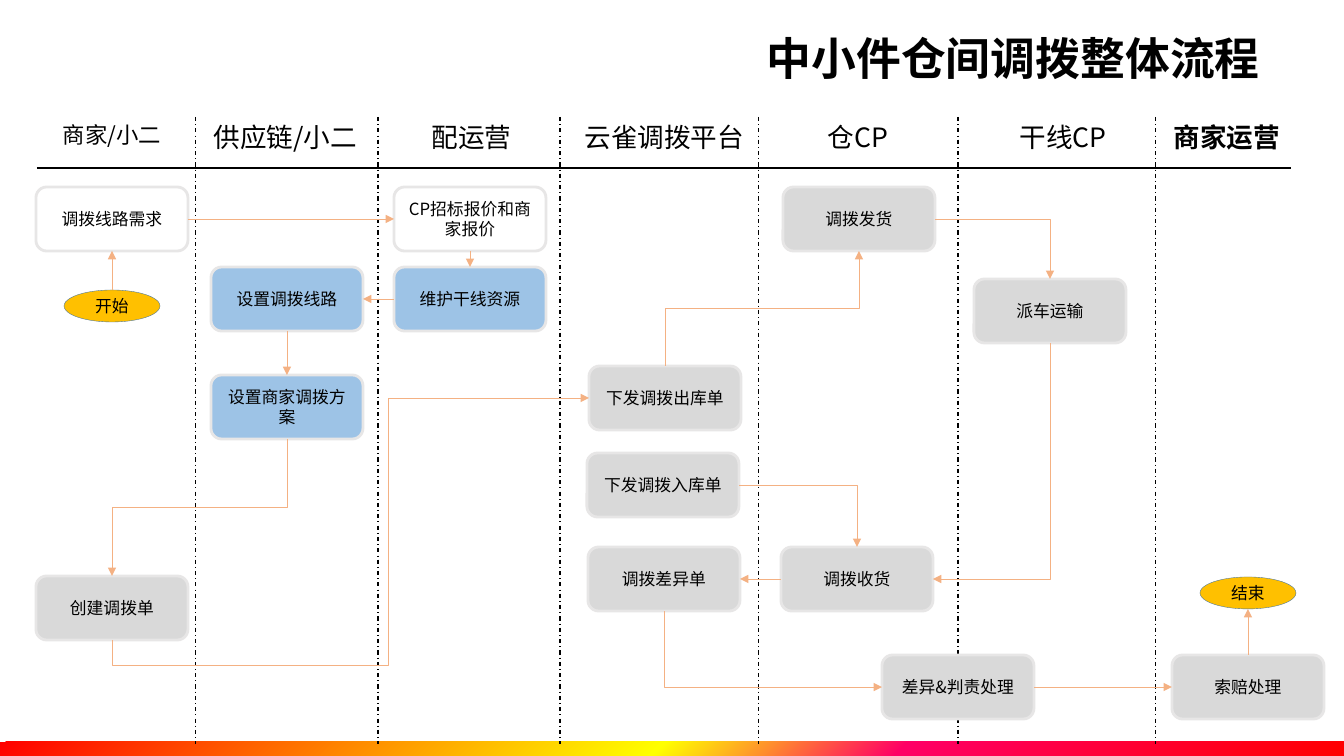
"""Build a swimlane slide showing the inter-warehouse transfer process."""
import dataclasses

import lxml.etree
import pptx
import pptx.dml.color
import pptx.enum.dml
import pptx.enum.shapes
import pptx.enum.text
import pptx.oxml.ns
import pptx.util

EMU_PER_PX = 914400 / 100.8
SLIDE_WIDTH, SLIDE_HEIGHT = 1344, 756
BOX_SIZE = (152, 64)
OVAL_SIZE = (96, 32)
LANE_TOP, LANE_BOTTOM = 117, 744


@dataclasses.dataclass(frozen=True)
class Theme:
    font: str = "Noto Sans CJK SC"
    latin_font: str = "Calibri"
    ink: str = "000000"
    white: str = "FFFFFF"
    blue: str = "9DC3E6"
    grey: str = "D9D9D9"
    box_line: str = "E7E6E6"
    oval_fill: str = "FFC000"
    oval_line: str = "43739E"
    arrow: str = "F4B183"
    band: tuple = ((0, "FF0000"), (33, "FF0066"), (51, "FFFF00"), (100, "FF0000"))
    title_size: float = 32
    lane_size: float = 19
    small_lane_size: float = 16
    box_size: float = 12


THEME = Theme()

LANES = [
    ("商家/小二", 53, 178, THEME.small_lane_size, False),
    ("供应链/小二", 204, 178, THEME.lane_size, False),
    ("配运营", 422, 178, THEME.lane_size, False),
    ("云雀调拨平台", 575, 190, THEME.lane_size, False),
    ("仓CP", 818, 178, THEME.lane_size, False),
    ("干线CP", 1010, 178, THEME.lane_size, False),
    ("商家运营", 1164, 138, THEME.lane_size, True),
]
DIVIDERS = [196, 378, 560, 759, 958, 1156]

BOXES = [
    ("调拨线路需求", 36, 187, THEME.white),
    ("CP招标报价和商家报价", 394, 187, THEME.white),
    ("维护干线资源", 394, 267, THEME.blue),
    ("设置调拨线路", 211, 267, THEME.blue),
    ("设置商家调拨方案", 211, 375, THEME.blue),
    ("创建调拨单", 36, 576, THEME.grey),
    ("下发调拨出库单", 589, 366, THEME.grey),
    ("下发调拨入库单", 587, 453, THEME.grey),
    ("调拨差异单", 588, 547, THEME.grey),
    ("调拨发货", 783, 187, THEME.grey),
    ("调拨收货", 781, 547, THEME.grey),
    ("派车运输", 974, 279, THEME.grey),
    ("差异&判责处理", 882, 655, THEME.grey),
    ("索赔处理", 1172, 655, THEME.grey),
]
OVALS = [("开始", 64, 290), ("结束", 1200, 577)]

STRAIGHT_ARROWS = [
    ("开始", "top", "调拨线路需求", "bottom"),
    ("调拨线路需求", "right", "CP招标报价和商家报价", "left"),
    ("CP招标报价和商家报价", "bottom", "维护干线资源", "top"),
    ("维护干线资源", "left", "设置调拨线路", "right"),
    ("设置调拨线路", "bottom", "设置商家调拨方案", "top"),
    ("调拨收货", "left", "调拨差异单", "right"),
    ("差异&判责处理", "right", "索赔处理", "left"),
    ("索赔处理", "top", "结束", "bottom"),
]
BENT_ARROWS = [
    ("设置商家调拨方案", "bottom", "创建调拨单", "top", [50]),
    ("创建调拨单", "bottom", "下发调拨出库单", "left", [-10.4, 57.9]),
    ("下发调拨出库单", "top", "调拨发货", "bottom", [50]),
    ("调拨发货", "right", "派车运输", "top", []),
    ("派车运输", "bottom", "调拨收货", "right", []),
    ("下发调拨入库单", "right", "调拨收货", "top", []),
    ("调拨差异单", "bottom", "差异&判责处理", "left", []),
]


def px(length):
    """Turn a px length into EMU."""
    return pptx.util.Emu(round(length * EMU_PER_PX))


def rgb(value):
    """Turn a hex string into a colour."""
    return pptx.dml.color.RGBColor.from_string(value)


def add_element(parent, tag, **attributes):
    """Append a DrawingML child element."""
    name = pptx.oxml.ns.qn(f"a:{tag}")
    return lxml.etree.SubElement(parent, name, {key: str(value) for key, value in attributes.items()})


def write_text(paragraph, text, size, bold=False, latin=THEME.font):
    """Add one styled run to a paragraph."""
    run = paragraph.add_run()
    run.text = text
    run.font.size = pptx.util.Pt(size)
    run.font.bold = bold
    run.font.name = latin
    run.font.color.rgb = rgb(THEME.ink)
    add_element(run.font._element, "ea", typeface=THEME.font)


def add_label(slide, bounds, text, size, bold=False, latin=THEME.font):
    """Add a wrapping text box and return its frame."""
    frame = slide.shapes.add_textbox(*map(px, bounds)).text_frame
    frame.word_wrap = True
    write_text(frame.paragraphs[0], text, size, bold, latin)
    return frame


def add_title(slide, text):
    """Add the right-aligned slide title."""
    frame = add_label(slide, (111, 14, 1159, 93), text, THEME.title_size, bold=True)
    frame.vertical_anchor = pptx.enum.text.MSO_ANCHOR.MIDDLE
    frame.paragraphs[0].alignment = pptx.enum.text.PP_ALIGN.RIGHT
    frame.paragraphs[0].line_spacing = 0.9


def add_band(slide):
    """Add the gradient band along the bottom edge."""
    top = 742
    shape = slide.shapes.add_shape(
        pptx.enum.shapes.MSO_SHAPE.RECTANGLE, 0, px(top), px(SLIDE_WIDTH), px(SLIDE_HEIGHT - top))
    shape.shadow.inherit = False
    shape.line.fill.background()
    shape.fill.gradient()
    gradient = shape._element.spPr.find(pptx.oxml.ns.qn("a:gradFill"))
    for child in list(gradient):
        gradient.remove(child)
    stops = add_element(gradient, "gsLst")
    for position, colour in THEME.band:
        add_element(add_element(stops, "gs", pos=position * 1000), "srgbClr", val=colour)
    circle = add_element(gradient, "path", path="circle")
    add_element(circle, "fillToRect", l=100000, t=100000)


def add_node(slide, preset, bounds, text, fill, line, line_width):
    """Add a filled process shape with centred text."""
    shape = slide.shapes.add_shape(preset, *map(px, bounds))
    shape.shadow.inherit = False
    shape.fill.solid()
    shape.fill.fore_color.rgb = rgb(fill)
    shape.line.color.rgb = rgb(line)
    shape.line.width = pptx.util.Pt(line_width)
    frame = shape.text_frame
    frame.word_wrap = True
    frame.vertical_anchor = pptx.enum.text.MSO_ANCHOR.MIDDLE
    frame.paragraphs[0].alignment = pptx.enum.text.PP_ALIGN.CENTER
    write_text(frame.paragraphs[0], text, THEME.box_size)


def add_line(slide, start, end, colour, width, kind=pptx.enum.shapes.MSO_CONNECTOR.STRAIGHT):
    """Add a plain connector between two points."""
    line = slide.shapes.add_connector(kind, *map(px, (*start, *end)))
    line.line.color.rgb = rgb(colour)
    line.line.width = pptx.util.Pt(width)
    add_element(line._element.spPr, "effectLst")
    return line


def add_arrow(slide, start, end, kind=pptx.enum.shapes.MSO_CONNECTOR.STRAIGHT):
    """Add a flow arrow between two points."""
    arrow = add_line(slide, start, end, THEME.arrow, 0.5, kind)
    add_element(arrow.line._get_or_add_ln(), "tailEnd", type="triangle")
    return arrow


def add_bent_arrow(slide, start, end, side, target_side, adjustments):
    """Add an elbow arrow that leaves its box by the given side."""
    arrow = add_arrow(slide, start, end, pptx.enum.shapes.MSO_CONNECTOR.ELBOW)
    across, down = end[0] - start[0], end[1] - start[1]
    transform = arrow._element.spPr.xfrm
    if side in ("top", "bottom"):
        middle_x, middle_y = (start[0] + end[0]) / 2, (start[1] + end[1]) / 2
        across, down = down, -across
        arrow.left, arrow.top = px(middle_x - abs(across) / 2), px(middle_y - abs(down) / 2)
        arrow.width, arrow.height = px(abs(across)), px(abs(down))
        transform.set("rot", str(90 * 60000))
    transform.set("flipH", str(int(across < 0)))
    transform.set("flipV", str(int(down < 0)))
    geometry = arrow._element.spPr.find(pptx.oxml.ns.qn("a:prstGeom"))
    geometry.set("prst", f"bentConnector{len(adjustments) + 2}")
    guides = geometry.find(pptx.oxml.ns.qn("a:avLst"))
    for number, percent in enumerate(adjustments, 1):
        add_element(guides, "gd", name=f"adj{number}", fmla=f"val {round(percent * 1000)}")


def side_point(bounds, side):
    """Return the middle of one side of a shape."""
    left, top, width, height = bounds
    return {
        "top": (left + width // 2, top),
        "bottom": (left + width // 2, top + height),
        "left": (left, top + height // 2),
        "right": (left + width, top + height // 2),
    }[side]


def add_lanes(slide):
    """Add lane headings, the heading rule and the lane dividers."""
    for text, left, width, size, bold in LANES:
        latin = THEME.latin_font if bold else THEME.font
        frame = add_label(slide, (left, 116, width, 42), text, size, bold, latin)
        frame.auto_size = pptx.enum.text.MSO_AUTO_SIZE.SHAPE_TO_FIT_TEXT
    add_line(slide, (37, 168), (1291, 168), THEME.ink, 1.5)
    for x in DIVIDERS:
        divider = add_line(slide, (x, LANE_TOP), (x, LANE_BOTTOM), THEME.ink, 0.75)
        divider.line.dash_style = pptx.enum.dml.MSO_LINE.DASH_DOT


def add_flow(slide):
    """Add the process shapes and the arrows between them."""
    shapes = pptx.enum.shapes.MSO_SHAPE
    places = {}
    for text, left, top, fill in BOXES:
        places[text] = (left, top, *BOX_SIZE)
        add_node(slide, shapes.ROUNDED_RECTANGLE, places[text], text, fill, THEME.box_line, 2)
    for text, left, top in OVALS:
        places[text] = (left, top, *OVAL_SIZE)
        add_node(slide, shapes.OVAL, places[text], text, THEME.oval_fill, THEME.oval_line, 0.25)
    for source, side, target, target_side in STRAIGHT_ARROWS:
        add_arrow(slide, side_point(places[source], side), side_point(places[target], target_side))
    for source, side, target, target_side, adjustments in BENT_ARROWS:
        start, end = side_point(places[source], side), side_point(places[target], target_side)
        add_bent_arrow(slide, start, end, side, target_side, adjustments)


def main():
    """Build and save the slide."""
    presentation = pptx.Presentation()
    presentation.slide_width, presentation.slide_height = px(SLIDE_WIDTH), px(SLIDE_HEIGHT)
    slide = presentation.slides.add_slide(presentation.slide_layouts[6])
    add_band(slide)
    add_title(slide, "中小件仓间调拨整体流程")
    add_lanes(slide)
    add_flow(slide)
    presentation.save("out.pptx")


if __name__ == "__main__":
    main()
